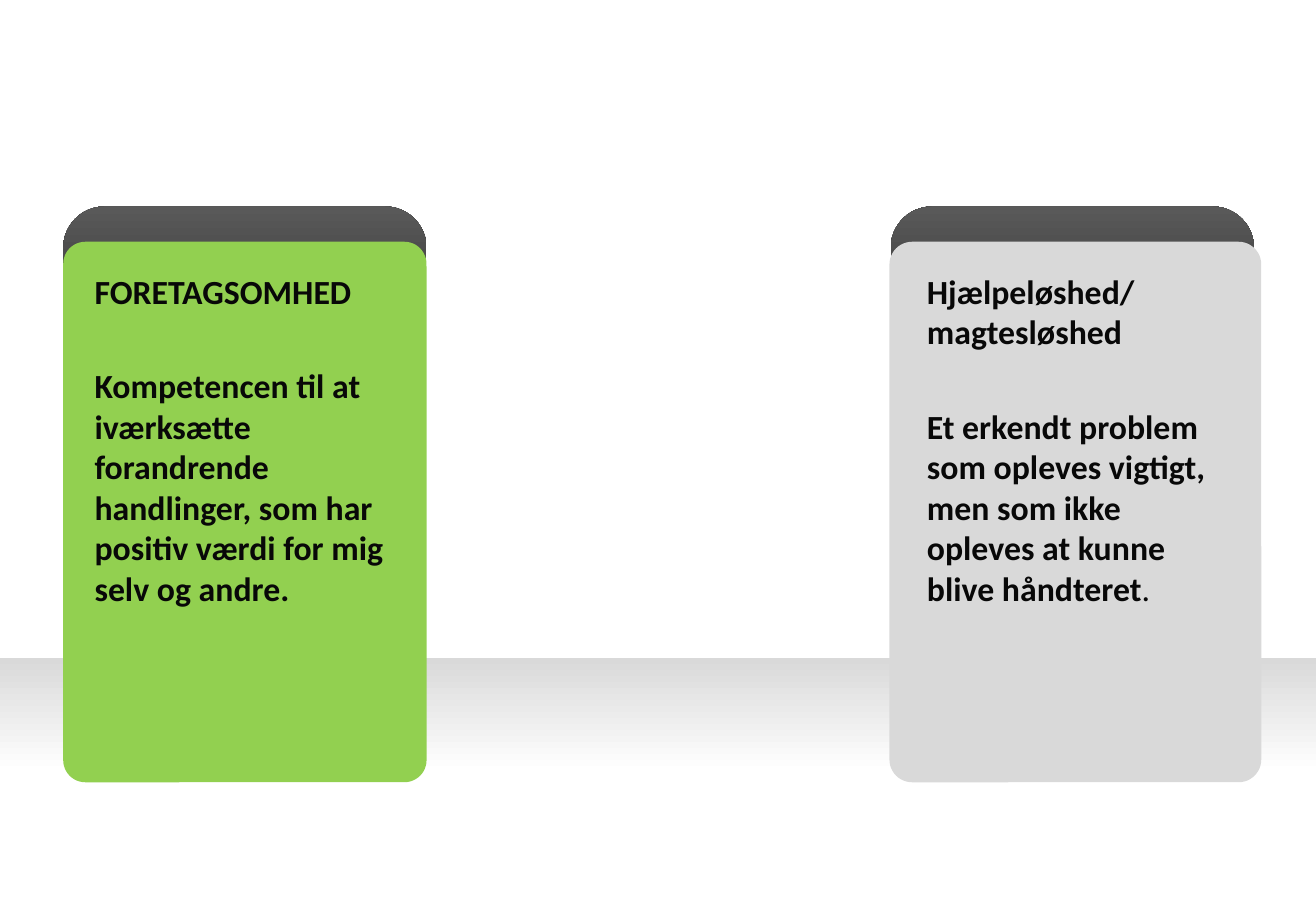
from pptx import Presentation
from pptx.dml.color import RGBColor
from pptx.enum.shapes import MSO_SHAPE
from pptx.enum.text import MSO_AUTO_SIZE
from pptx.util import Inches, Pt

RECT = MSO_SHAPE.RECTANGLE
ROUND = MSO_SHAPE.ROUNDED_RECTANGLE
GROW = MSO_AUTO_SIZE.SHAPE_TO_FIT_TEXT

WHITE = RGBColor(0xFF, 0xFF, 0xFF)
SILVER = RGBColor(0xD9, 0xD9, 0xD9)
GREEN = RGBColor(0x92, 0xD0, 0x50)
DARK = RGBColor(0x26, 0x26, 0x26)
GREY = RGBColor(0x59, 0x59, 0x59)
INK = RGBColor(0x08, 0x08, 0x08)


def add_box(slide, kind, box, adjust=None):
    shape = slide.shapes.add_shape(kind, *map(Inches, box))
    shape.shadow.inherit = False
    shape.line.fill.background()
    if adjust is not None:
        shape.adjustments[0] = adjust
    return shape


def fade_up(shape, low, high, start=0):
    fill = shape.fill
    fill.gradient()
    fill.gradient_angle = 90
    for stop, color, place in zip(fill.gradient_stops, (low, high), (start, 1)):
        stop.color.rgb = color
        stop.position = place


def add_card(slide, tab_left, left, width, color):
    tab = add_box(slide, ROUND, (tab_left, 1.7, 2.99, 1.45), 0.235)
    fade_up(tab, DARK, GREY)
    body = add_box(slide, ROUND, (left, 1.99, width, 4.45), 0.061)
    body.fill.solid()
    body.fill.fore_color.rgb = color


def add_run(para, text, bold=True):
    run = para.add_run()
    run.text = text
    run.font.name = "Calibri"
    run.font.size = Pt(20)
    run.font.bold = bold
    run.font.color.rgb = INK


def add_text(slide, left, width, head, body, tail=""):
    box = slide.shapes.add_textbox(
        Inches(left), Inches(2.18), Inches(width), Inches(3.33))
    frame = box.text_frame
    frame.word_wrap = True
    frame.auto_size = GROW
    add_run(frame.paragraphs[0], head)
    para = frame.add_paragraph()
    para.space_before = Pt(32)
    add_run(para, body)
    if tail:
        add_run(para, tail, False)


def main():
    deck = Presentation()
    deck.slide_width = Inches(10.83)
    deck.slide_height = Inches(7.5)
    slide = deck.slides.add_slide(deck.slide_layouts[6])

    floor = add_box(slide, RECT, (0, 5.42, 10.83, 2.08))
    fade_up(floor, WHITE, SILVER, 0.55)

    add_card(slide, 7.33, 7.32, 3.06, SILVER)
    add_card(slide, 0.52, 0.52, 2.99, GREEN)
    add_text(slide, 0.68, 2.84, "FORETAGSOMHED",
             "Kompetencen til at iværksætte forandrende handlinger, "
             "som har positiv værdi for mig selv og andre.")
    add_text(slide, 7.53, 2.6, "Hjælpeløshed/ magtesløshed",
             "Et erkendt problem som opleves vigtigt, "
             "men som ikke opleves at kunne blive håndteret", ".")
    deck.save("out.pptx")


if __name__ == "__main__":
    main()
